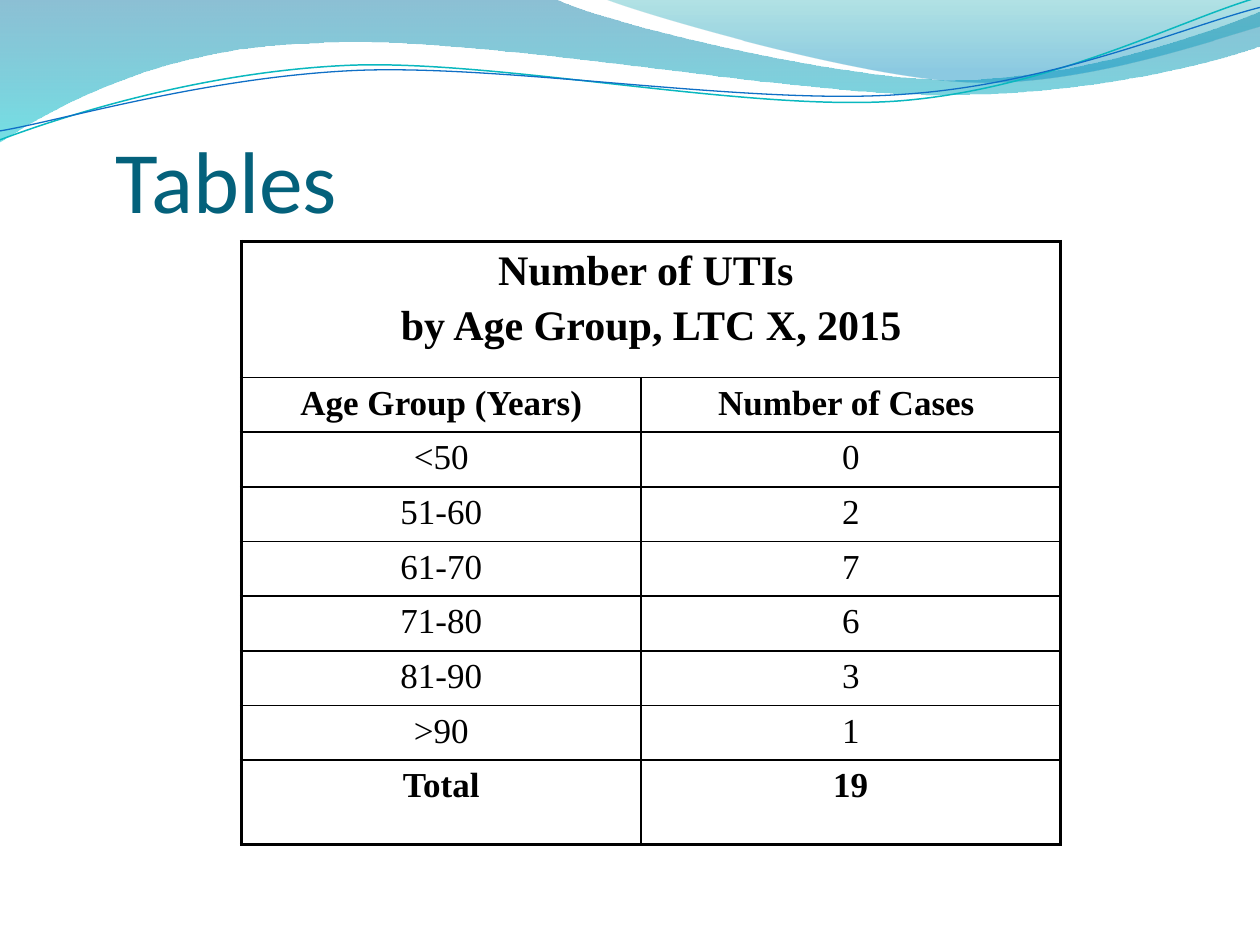
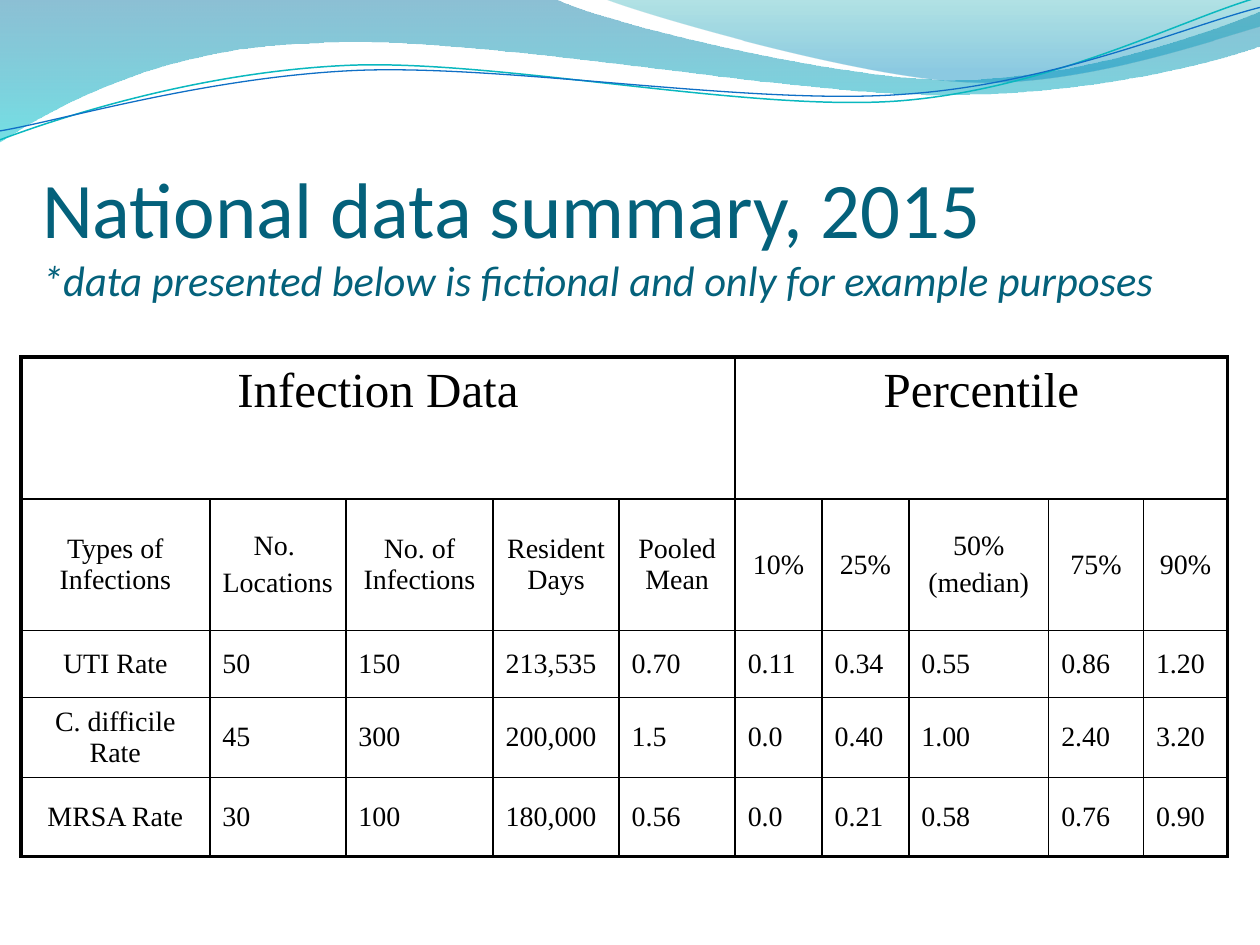
from dataclasses import dataclass
from itertools import takewhile

from lxml.etree import SubElement
from pptx import Presentation
from pptx.dml.color import RGBColor
from pptx.enum.text import MSO_ANCHOR as Anchor, PP_ALIGN as Align
from pptx.oxml.ns import qn
from pptx.util import Cm, Pt

TITLE_FONT, TABLE_FONT = "Calibri", "Times New Roman"
TITLE_COLOR, BLACK = "04617B", "000000"
OUTER, INNER = 2.25, 1
LINE_TILT = 357.3

Point = tuple[float, float]


@dataclass
class Stop:
    position: float
    color: str
    alpha: int


@dataclass
class Wave:
    start: Point
    segments: list[tuple[Point, ...]]
    stops: tuple[Stop, ...] = ()
    line_color: str = ""
    line_width: float = 0


@dataclass
class TitleRun:
    text: str
    size: float
    italic: bool = False


@dataclass
class Row:
    cells: tuple[str | None, ...]
    height: float
    size: float
    bold: bool = False
    anchor: Anchor = Anchor.TOP
    value_align: Align = Align.CENTER


WAVES = [
    Wave(
        (0, 0),
        [
            ((11.18, -0.03),),
            ((12.09, 0.43), (16.87, 1.6), (19.25, 1.6)),
            ((21.67, 1.6), (24.33, 0.66), (25.4, 0.23)),
            ((25.43, 0.91),),
            ((24.97, 1.12), (22.1, 1.93), (18.95, 1.91)),
            ((15.8, 1.91), (9.7, 0.71), (6.53, 0.86)),
            ((3.28, 0.91), (1.17, 2.11), (-0.03, 2.87)),
            ((0, 0),),
        ],
        stops=(Stop(0, "0074A1", 45), Stop(1, "00C6CF", 55)),
    ),
    Wave(
        (12.17, -0.03),
        [
            ((12.93, 0.28), (17.32, 1.57), (19.53, 1.65)),
            ((21.74, 1.75), (24.41, 0.81), (25.4, 0.53)),
            ((25.4, 0),),
            ((12.17, -0.03),),
        ],
        stops=(Stop(0, "00A1A9", 30), Stop(0.8, "008BBF", 45)),
    ),
    Wave(
        (-0.05, 2.22),
        [
            ((1.19, 1.82), (4.02, 1.04), (7.05, 1.05)),
            ((10.05, 1.07), (15.02, 2.37), (18.08, 2.29)),
            ((21.13, 2.2), (23.87, 0.91), (25.41, 0.55)),
        ],
        line_color="0AB8BF",
        line_width=0.85,
    ),
    Wave(
        (-0.04, 2.04),
        [
            ((1.16, 1.9), (4.18, 1.15), (7.2, 1.16)),
            ((10.25, 1.18), (15.13, 2.25), (18.19, 2.16)),
            ((21.21, 2.1), (23.93, 1.06), (25.45, 0.75)),
        ],
        line_color="0F6FC6",
        line_width=0.75,
    ),
]

AGE_CASES = [("<50", "0"), ("51-60", "2"), ("61-70", "7"),
             ("71-80", "6"), ("81-90", "3"), (">90", "1")]
AGE_ROWS = [
    Row(("Number of UTIs \nby Age Group, LTC X, 2015", None), 2.74, 24, True),
    Row(("Age Group (Years)", "Number of Cases "), 1.1, 20, True),
    *(Row(cells, 1.1, 20) for cells in AGE_CASES),
    Row(("Total", "19"), 1.7, 20, True),
]

INFECTION_RATES = [
    (("UTI Rate", "50", "150", "213,535", "0.70",
      "0.11", "0.34", "0.55", "0.86", "1.20"), 1.35),
    (("C. difficile Rate", "45", "300", "200,000", "1.5",
      "0.0", "0.40", "1.00", "2.40", "3.20"), 1.6),
    (("MRSA Rate", "30", "100", "180,000", "0.56",
      "0.0", "0.21", "0.58", "0.76", "0.90"), 1.6),
]
INFECTION_ROWS = [
    Row(("Infection Data", *[None] * 4, "Percentile", *[None] * 4), 2.86, 28),
    Row(("Types of Infections", "No. \nLocations", "No. of Infections",
         "Resident Days", "Pooled Mean", "10%", "25%", "50%\n(median)",
         "75%", "90%"), 2.65, 16, anchor=Anchor.MIDDLE),
    *(Row(cells, height, 16, anchor=Anchor.MIDDLE, value_align=Align.LEFT)
      for cells, height in INFECTION_RATES),
]


def rgb(color: str) -> RGBColor:
    return RGBColor.from_string(color)


def set_font(r, name: str, color: str, **values) -> None:
    r.font.color.rgb = rgb(color)
    for key, value in {"name": name, **values}.items():
        setattr(r.font, key, value)


def bend_segments(sp, segments: list[tuple[Point, ...]]) -> None:
    steps = sp.element.spPr.iter(qn("a:lnTo"))
    steps = iter(list(steps))
    for segment in segments:
        first, *others = [next(steps) for _ in segment]
        if others:
            first.tag = qn("a:cubicBezTo")
        for step in others:
            first.append(step[0])
            step.getparent().remove(step)


def add_wave(s, wave: Wave) -> None:
    points = [wave.start, *(point for segment in wave.segments for point in segment)]
    outline = [(Cm(x), Cm(y)) for x, y in points]
    builder = s.shapes.build_freeform(*outline[0])
    builder.add_line_segments(outline[1:], close=False)
    sp = builder.convert_to_shape()
    bend_segments(sp, wave.segments)
    sp.shadow.inherit = False
    if not wave.stops:
        sp.rotation = LINE_TILT
        sp.fill.background()
        sp.line.color.rgb = rgb(wave.line_color)
        sp.line.width = Pt(wave.line_width)
        return
    sp.line.fill.background()
    sp.fill.gradient()
    sp.fill.gradient_angle = 270
    for target, stop in zip(sp.fill.gradient_stops, wave.stops):
        target.position = stop.position
        target.color.rgb = rgb(stop.color)
    for color, stop in zip(sp.element.spPr.iter(qn("a:srgbClr")), wave.stops):
        SubElement(color, qn("a:alpha"), val=str(stop.alpha * 1000))


def add_title(s, box: tuple[float, ...], runs: list[TitleRun]) -> None:
    tf = s.shapes.add_textbox(*map(Cm, box)).text_frame
    for key, value in {"word_wrap": True, "vertical_anchor": Anchor.BOTTOM,
                       "margin_left": 0, "margin_right": 0,
                       "margin_top": Cm(0.13), "margin_bottom": 0}.items():
        setattr(tf, key, value)
    p = tf.paragraphs[0]
    for i, run in enumerate(runs):
        if i:
            p.add_line_break()
        r = p.add_run()
        r.text = run.text
        set_font(r, TITLE_FONT, TITLE_COLOR, size=Pt(run.size), italic=run.italic)


def set_borders(cell, widths: dict[str, float]) -> None:
    props = cell._tc.get_or_add_tcPr()
    for side, width in widths.items():
        line = SubElement(props, qn(f"a:ln{side}"), w=str(Pt(width)))
        SubElement(SubElement(line, qn("a:solidFill")), qn("a:srgbClr"), val=BLACK)


def fill_cell(cell, text: str, row: Row, align: Align) -> None:
    cell.vertical_anchor = row.anchor
    cell.text_frame.text = text
    for p in cell.text_frame.paragraphs:
        p.alignment = align
        before = SubElement(p._p.get_or_add_pPr(), qn("a:spcBef"))
        SubElement(before, qn("a:spcPct"), val="20000")
        for r in p.runs:
            set_font(r, TABLE_FONT, BLACK, size=Pt(row.size), bold=row.bold)


def add_data_table(s, left: float, top: float, widths: list[float], rows: list[Row]) -> None:
    size = Cm(sum(widths)), Cm(sum(row.height for row in rows))
    table = s.shapes.add_table(len(rows), len(widths), Cm(left), Cm(top), *size).table
    table.first_row = table.horz_banding = False
    for column, width in zip(table.columns, widths):
        column.width = Cm(width)
    for i, row in enumerate(rows):
        table.rows[i].height = Cm(row.height)
        for j, text in enumerate(row.cells):
            cell = table.cell(i, j)
            spanned = len(list(takewhile(lambda c: c is None, row.cells[j + 1:])))
            outer = {"L": j == 0, "R": j + spanned == len(widths) - 1,
                     "T": i == 0, "B": i == len(rows) - 1}
            set_borders(cell, {side: OUTER if edge else INNER
                               for side, edge in outer.items()})
            cell.fill.background()
            if text is None:
                continue
            if spanned:
                cell.merge(table.cell(i, j + spanned))
            fill_cell(cell, text, row, row.value_align if j else Align.CENTER)


def add_wave_slide(prs):
    s = prs.slides.add_slide(prs.slide_layouts[6])
    for wave in WAVES:
        add_wave(s, wave)
    return s


def main() -> None:
    prs = Presentation()
    prs.slide_width, prs.slide_height = Cm(25.4), Cm(19.05)

    s = add_wave_slide(prs)
    add_title(s, (2.33, 1.47, 21.59, 3.18), [TitleRun("Tables", 50)])
    add_data_table(s, 4.87, 4.87, [8.05, 8.46], AGE_ROWS)

    s = add_wave_slide(prs)
    add_title(s, (0.85, 2.97, 23.06, 3.18), [
        TitleRun("National data summary, 2015", 45),
        TitleRun("*data presented below is fictional and only for example purposes",
                 24.3, italic=True),
    ])
    add_data_table(s, 0.42, 7.2,
                   [3.81, 2.74, 2.97, 2.54, 2.34, 1.75, 1.75, 2.82, 1.91, 1.7],
                   INFECTION_ROWS)

    prs.save("out.pptx")


if __name__ == "__main__":
    main()
